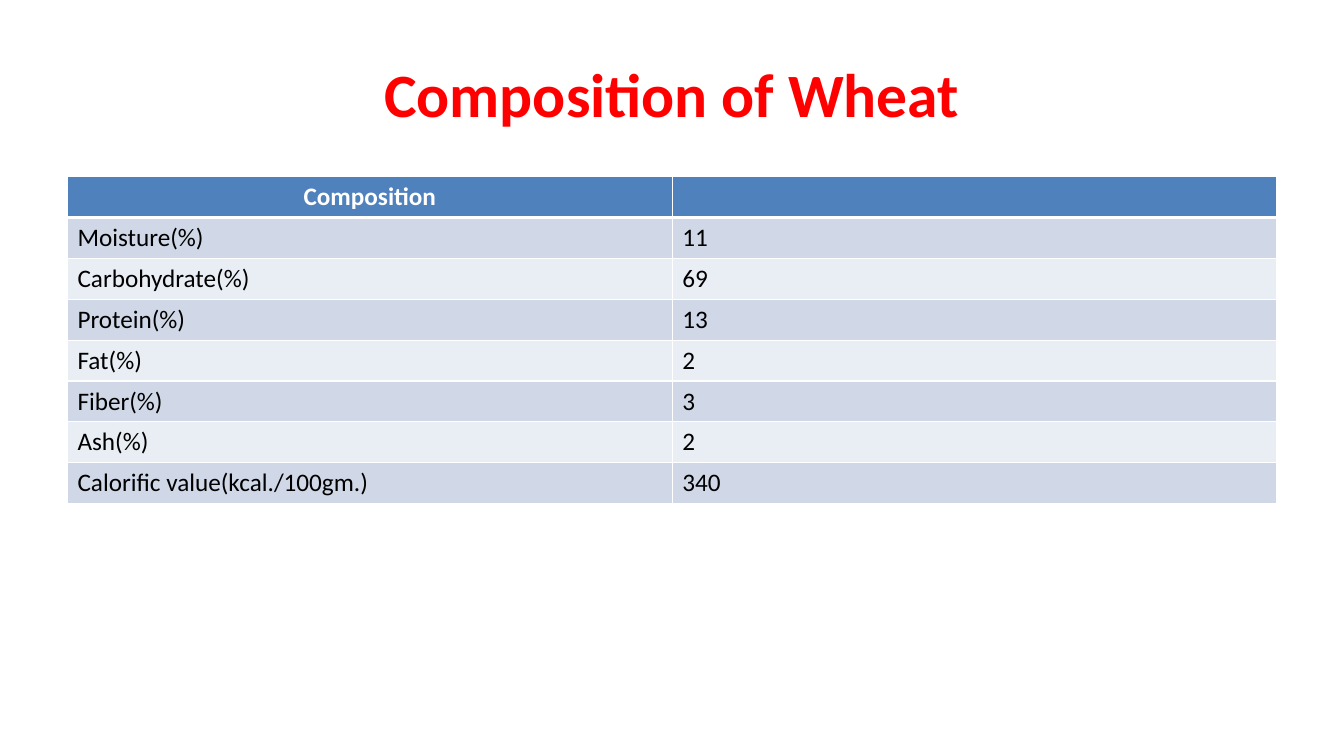
import pptx
import pptx.dml.color
import pptx.enum.text
import pptx.oxml
import pptx.oxml.ns
import pptx.util
from pptx.dml.color import RGBColor
from pptx.util import Cm

RED = RGBColor(0xFF, 0x00, 0x00)
WHITE = RGBColor(0xFF, 0xFF, 0xFF)
BLACK = RGBColor(0x00, 0x00, 0x00)
HEADER_BLUE = RGBColor(0x4F, 0x81, 0xBD)
BAND_DARK = RGBColor(0xD0, 0xD8, 0xE8)
BAND_LIGHT = RGBColor(0xE9, 0xED, 0xF4)

FONT = "Calibri"
LEFT, WIDTH = Cm(1.7), Cm(30.48)
ROW_HEIGHT = Cm(1.03)
CENTER = pptx.enum.text.PP_ALIGN.CENTER
MIDDLE = pptx.enum.text.MSO_ANCHOR.MIDDLE

WHEAT = [
    ("Composition", ""),
    ("Moisture(%)", "11"),
    ("Carbohydrate(%)", "69"),
    ("Protein(%)", "13"),
    ("Fat(%)", "2"),
    ("Fiber(%)", "3"),
    ("Ash(%)", "2"),
    ("Calorific value(kcal./100gm.)", "340"),
]


def add_span(para, text, size, color, bold=False):
    span = para.add_run()
    span.text = text
    span.font.name = FONT
    span.font.size = pptx.util.Pt(size)
    span.font.bold = bold
    span.font.color.rgb = color


def set_title(page, text):
    title = page.shapes.title
    title.left, title.top = LEFT, Cm(0.76)
    title.width, title.height = WIDTH, Cm(3.18)
    title.text_frame.vertical_anchor = MIDDLE
    para = title.text_frame.paragraphs[0]
    para.alignment = CENTER
    add_span(para, text, 44, RED, bold=True)


def set_borders(cell, top, bottom):
    """Draw white borders, 1 pt at the sides and the given points above and below."""
    properties = cell._tc.get_or_add_tcPr()
    for side, points in (("L", 1), ("R", 1), ("T", top), ("B", bottom)):
        width = pptx.util.Pt(points)
        properties.append(pptx.oxml.parse_xml(
            f'<a:ln{side} {pptx.oxml.ns.nsdecls("a")} w="{width}">'
            f'<a:solidFill><a:srgbClr val="{WHITE}"/></a:solidFill></a:ln{side}>'))


def format_cell(cell, text, row):
    header = row == 0
    set_borders(cell, top=3 if row == 1 else 1, bottom=3 if header else 1)
    cell.fill.solid()
    band = BAND_DARK if row % 2 else BAND_LIGHT
    cell.fill.fore_color.rgb = HEADER_BLUE if header else band
    para = cell.text_frame.paragraphs[0]
    if header:
        para.alignment = CENTER
    if text:
        add_span(para, text, 18, WHITE if header else BLACK, bold=header)


def add_composition_table(page, rows):
    frame = page.shapes.add_table(
        len(rows), len(rows[0]), LEFT, Cm(4.45), WIDTH, ROW_HEIGHT * len(rows))
    for row, values in enumerate(rows):
        frame.table.rows[row].height = ROW_HEIGHT
        for column, text in enumerate(values):
            format_cell(frame.table.cell(row, column), text, row)


def main():
    deck = pptx.Presentation()
    deck.slide_width, deck.slide_height = Cm(33.87), Cm(19.05)
    title_only = deck.slide_layouts.get_by_name("Title Only")
    page = deck.slides.add_slide(title_only)
    set_title(page, "Composition of Wheat")
    add_composition_table(page, WHEAT)
    deck.save("out.pptx")


if __name__ == "__main__":
    main()
